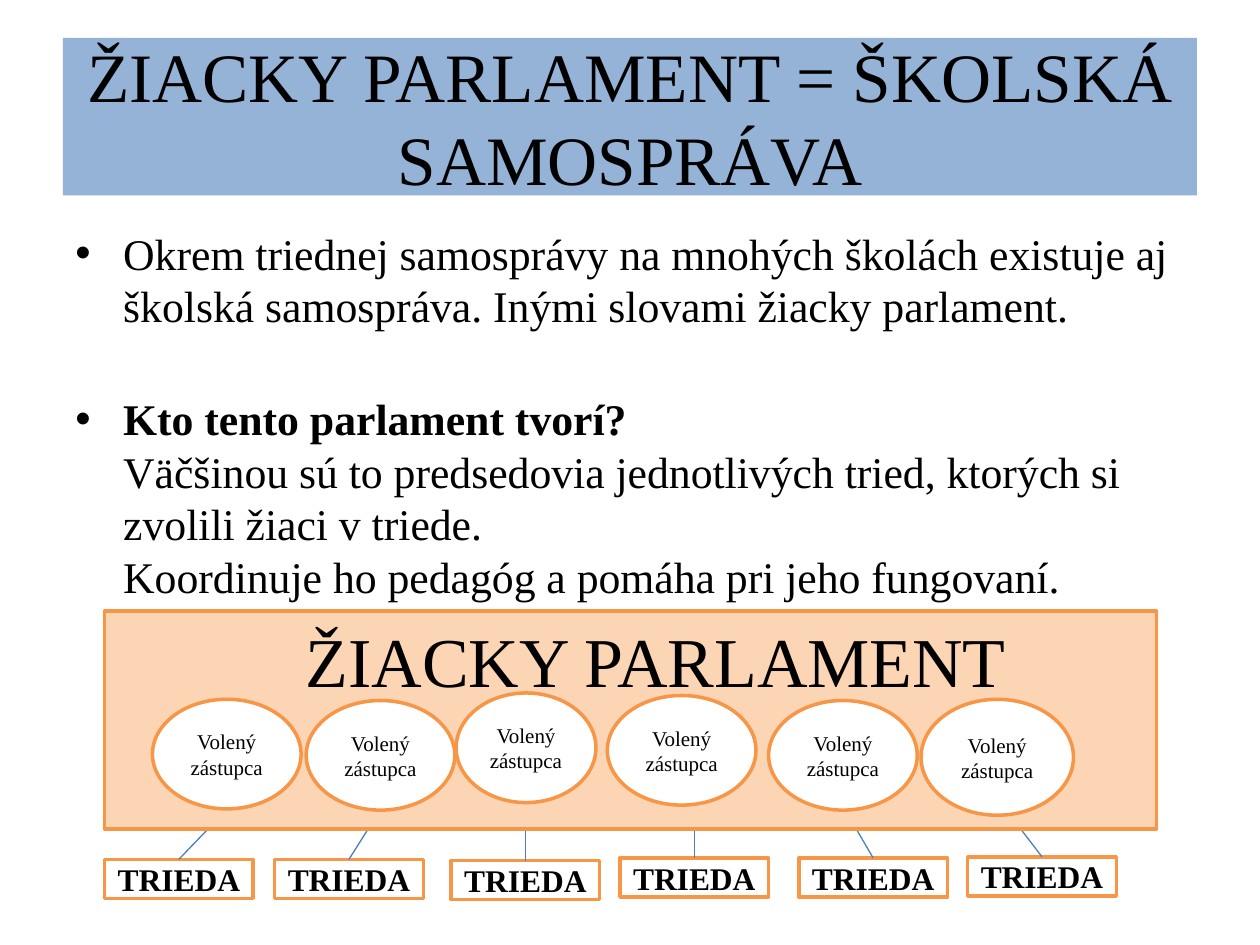
from dataclasses import dataclass

from lxml import etree
from pptx import Presentation
from pptx.dml.color import RGBColor
from pptx.enum.shapes import MSO_CONNECTOR, MSO_SHAPE
from pptx.enum.text import MSO_ANCHOR, PP_ALIGN
from pptx.oxml.ns import qn
from pptx.util import Inches, Pt

RECT, OVAL = MSO_SHAPE.RECTANGLE, MSO_SHAPE.OVAL
LINE = MSO_CONNECTOR.STRAIGHT
TOP, MID = MSO_ANCHOR.TOP, MSO_ANCHOR.MIDDLE
LEFT, MIDDLE = PP_ALIGN.LEFT, PP_ALIGN.CENTER


@dataclass(frozen=True)
class Theme:
    face: str = "Times New Roman"
    ink: str = "000000"
    paper: str = "FFFFFF"
    banner: str = "95B3D7"
    panel: str = "FCD5B5"
    edge: str = "F79646"
    link: str = "4B7EBC"
    title: float = 39.6
    head: float = 40
    body: float = 25
    label: float = 18
    small: float = 12


THEME = Theme()
COLS, ROWS = 100, 75
CLASSES = [(8.3, 68.2), (21.8, 68.2), (35.8, 68.3),
           (49.2, 68.1), (63.4, 68.1), (76.8, 68)]
CLASS_SIZE = (11.8, 3.1)
LINK_ENDS = [(21.8, 60.3), (32.7, 60.3), (41.7, 60.3),
             (55.1, 60.3), (65.7, 61.9), (76.8, 60.3)]
VOTERS = [(36.2, 55, 11.1, 8.7), (24.3, 55.6, 11.8, 8.7),
          (12.1, 55.5, 11.8, 8.7), (48.2, 55.2, 11.8, 8.7),
          (61, 55.6, 11.8, 8.7), (73.1, 55.5, 12.1, 9.2)]
POINTS = [
    [("Okrem triednej samosprávy na mnohých školách existuje aj "
      "školská samospráva. Inými slovami žiacky parlament.", False)],
    [("Kto tento parlament tvorí?", True),
     ("Väčšinou sú to predsedovia jednotlivých tried, ktorých si "
      "zvolili žiaci v triede.", False),
     ("Koordinuje ho pedagóg a pomáha pri jeho fungovaní.", False)],
]


def cells(*counts):
    return [Inches(count / 10) for count in counts]


def color(code):
    return RGBColor.from_string(code)


def style(para, size, bold=None):
    font = para.font
    font.name, font.size, font.bold = THEME.face, Pt(size), bold
    font.color.rgb = color(THEME.ink)


def add_box(slide, kind, area, text, size, fill, edge=None,
            bold=None, align=MIDDLE, anchor=MID, indent=0):
    shape = slide.shapes.add_shape(kind, *cells(*area))
    shape.shadow.inherit = False
    shape.fill.solid()
    shape.fill.fore_color.rgb = color(fill)
    if edge:
        shape.line.color.rgb = color(edge)
        shape.line.width = Pt(2)
    else:
        shape.line.fill.background()
    frame = shape.text_frame
    frame.word_wrap, frame.vertical_anchor = True, anchor
    para = frame.paragraphs[0]
    para.text, para.alignment = text, align
    if indent:
        para._p.get_or_add_pPr().set("marL", str(cells(indent)[0]))
    style(para, size, bold)


def add_bullet(para):
    props = para._p.get_or_add_pPr()
    step = Inches(0.38)
    props.set("marL", str(step))
    props.set("indent", str(-step))
    font = etree.SubElement(props, qn("a:buFont"))
    font.set("typeface", "Arial")
    mark = etree.SubElement(props, qn("a:buChar"))
    mark.set("char", "•")


def add_points(slide, area):
    frame = slide.shapes.add_textbox(*cells(*area)).text_frame
    frame.word_wrap = True
    for index, lines in enumerate(POINTS):
        para = frame.add_paragraph() if index else frame.paragraphs[0]
        add_bullet(para)
        if index:
            para.space_before = Pt(34.5)
        style(para, THEME.body)
        for row, (text, bold) in enumerate(lines):
            if row:
                para.add_line_break()
            run = para.add_run()
            run.text = text
            if bold:
                run.font.bold = True


def add_link(slide, start, end):
    link = slide.shapes.add_connector(LINE, *cells(*start, *end))
    link.line.color.rgb = color(THEME.link)
    link.line.width = Pt(0.75)
    etree.SubElement(link._element.spPr, qn("a:effectLst"))


def main():
    deck = Presentation()
    deck.slide_width, deck.slide_height = cells(COLS, ROWS)
    slide = deck.slides.add_slide(deck.slide_layouts[6])
    add_box(slide, RECT, (5, 3, 90, 12.5),
            "ŽIACKY PARLAMENT = ŠKOLSKÁ SAMOSPRÁVA",
            THEME.title, THEME.banner)
    add_points(slide, (5, 17.5, 90, 54.6))
    for spot in CLASSES:
        add_box(slide, RECT, spot + CLASS_SIZE, "TRIEDA", THEME.label,
                THEME.paper, THEME.edge, bold=True)
    for (left, top), end in zip(CLASSES, LINK_ENDS):
        add_link(slide, (left + CLASS_SIZE[0] / 2, top), end)
    add_box(slide, RECT, (8.3, 48.5, 83.5, 17.3), "ŽIACKY PARLAMENT",
            THEME.head, THEME.panel, THEME.edge,
            align=LEFT, anchor=TOP, indent=15)
    for area in VOTERS:
        add_box(slide, OVAL, area, "Volený zástupca", THEME.small,
                THEME.paper, THEME.edge)
    deck.save("out.pptx")


if __name__ == "__main__":
    main()
